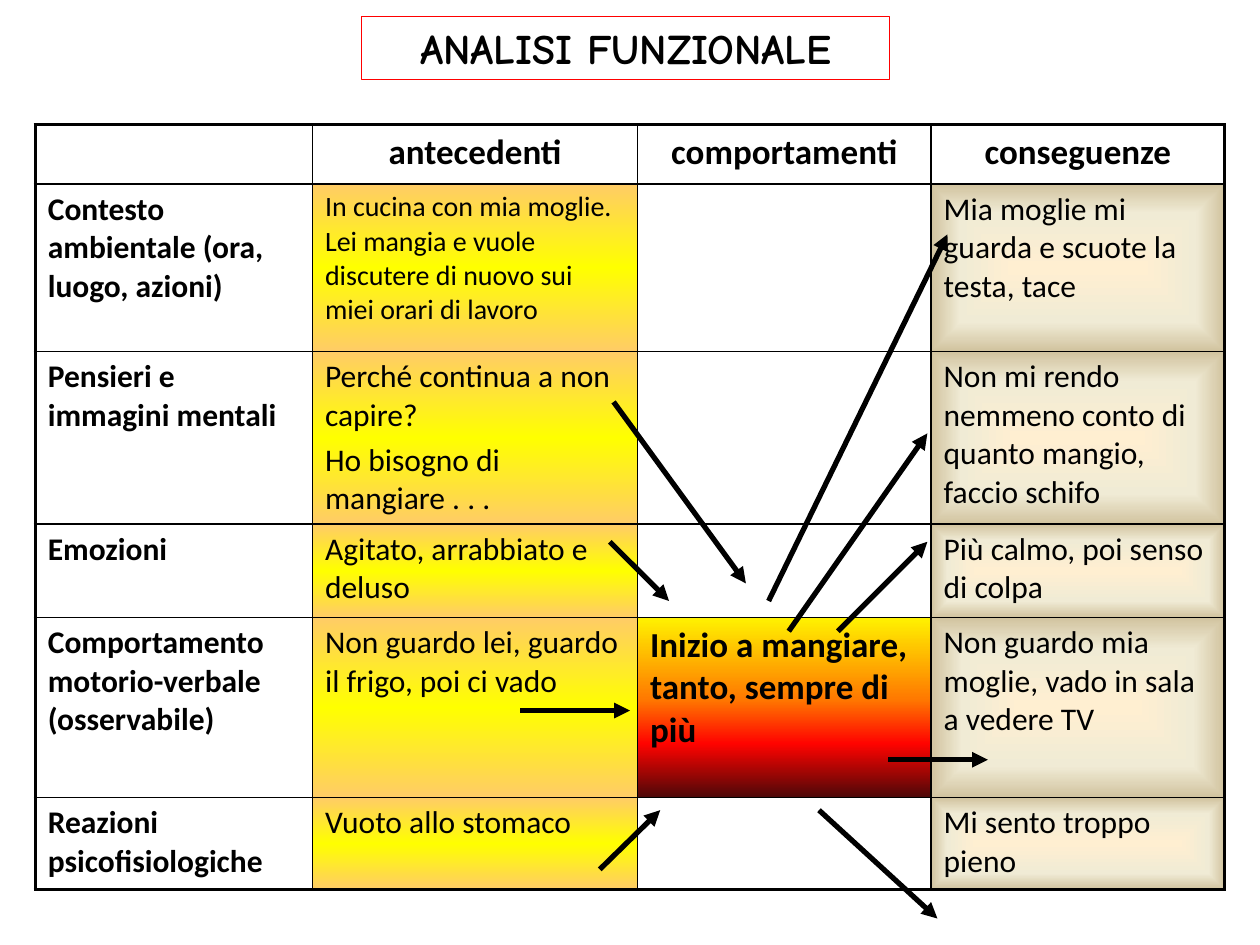
from lxml import etree
from pptx import Presentation
from pptx.dml.color import RGBColor
from pptx.enum.shapes import MSO_CONNECTOR
from pptx.enum.text import MSO_AUTO_SIZE, PP_ALIGN
from pptx.oxml.ns import qn
from pptx.util import Inches, Pt

STRAIGHT = MSO_CONNECTOR.STRAIGHT
CENTER, LEFT = PP_ALIGN.CENTER, PP_ALIGN.LEFT
GROW = MSO_AUTO_SIZE.SHAPE_TO_FIT_TEXT

COLORS = {"ink": "000000", "paper": "FFFFFF", "frame": "FF0000"}
YELLOW = [(0, "FFCC66"), (50, "FFFF00"), (100, "FFCC66")]
FIRE = [(0, "FFF200"), (45, "FF7A00"), (70, "FF0300"), (100, "4D0808")]
SAND = [(0, "FFEFD1"), (65, "F0EBD5"), (100, "D1C39F")]

COLS = [2.2, 2.58, 2.33, 2.33]
ROWS = [0.47, 1.33, 1.36, 0.74, 1.43, 0.73]
GRID = [
    ["", "antecedenti", "comportamenti", "conseguenze"],
    ["Contesto ambientale (ora, luogo, azioni)",
     "In cucina con mia moglie. Lei mangia e vuole discutere di nuovo sui miei orari di lavoro",
     "", "Mia moglie mi guarda e scuote la testa, tace"],
    ["Pensieri e immagini mentali",
     "Perché continua a non capire?\nHo bisogno di mangiare . . .",
     "", "Non mi rendo nemmeno conto di quanto mangio, faccio schifo"],
    ["Emozioni", "Agitato, arrabbiato e deluso", "", "Più calmo, poi senso di colpa"],
    ["Comportamento motorio-verbale (osservabile)",
     "Non guardo lei, guardo il frigo, poi ci vado",
     "Inizio a mangiare, tanto, sempre di più",
     "Non guardo mia moglie, vado in sala a vedere TV"],
    ["Reazioni psicofisiologiche", "Vuoto allo stomaco", "", "Mi sento troppo pieno"],
]
ARROWS = [
    (4.87, 3.19, 5.92, 4.63), (4.84, 4.3, 5.31, 4.77), (7.05, 6.03, 7.84, 6.03),
    (6.5, 6.43, 7.44, 7.29), (6.65, 5.01, 7.36, 4.3), (6.26, 5.01, 7.36, 3.44),
    (6.1, 4.77, 7.52, 1.86), (4.13, 5.64, 5, 5.64), (4.76, 6.9, 5.24, 6.43),
]


def rgb(name):
    return RGBColor.from_string(COLORS[name])


def node(parent, tag, **attrs):
    return etree.SubElement(parent, qn(tag), {k: str(v) for k, v in attrs.items()})


class Board:
    """Holds the text style and the current slide."""
    font = "Calibri"

    def __init__(self, slide):
        self.slide = slide

    def text(self, para, words, size, bold, align=LEFT, font=None):
        para.alignment = align
        run = para.add_run()
        run.text = words
        run.font.name = font or self.font
        run.font.size = Pt(size)
        run.font.bold = bold
        run.font.color.rgb = rgb("ink")

    def title(self, words, x, y, w, h):
        box = self.slide.shapes.add_textbox(Inches(x), Inches(y), Inches(w), Inches(h))
        box.line.color.rgb = rgb("frame")
        box.line.width = Pt(0.75)
        box.text_frame.word_wrap = False
        box.text_frame.auto_size = GROW
        self.text(box.text_frame.paragraphs[0], words, 24, True, CENTER, "Comic Neue")

    def arrow(self, *ends):
        line = self.slide.shapes.add_connector(STRAIGHT, *map(Inches, ends))
        line.line.color.rgb = rgb("ink")
        line.line.width = Pt(3)
        props = line._element.spPr
        node(props.find(qn("a:ln")), "a:tailEnd", type="triangle")
        node(props, "a:effectLst")

    def border(self, cell, edges):
        """Thick lines on the table's outer edges, thin ones inside."""
        for side in "LRTB":
            width = Pt(2.25 if side in edges else 1)
            line = node(cell._tc.get_or_add_tcPr(), "a:ln" + side, w=width)
            node(node(line, "a:solidFill"), "a:srgbClr", val=COLORS["ink"])

    def blend(self, cell, stops, radial=False):
        grad = node(cell._tc.get_or_add_tcPr(), "a:gradFill", rotWithShape=1)
        steps = node(grad, "a:gsLst")
        for pos, color in stops:
            node(node(steps, "a:gs", pos=pos * 1000), "a:srgbClr", val=color)
        if radial:
            shade = node(grad, "a:path", path="shape")
            node(shade, "a:fillToRect", l=50000, t=50000, r=50000, b=50000)
        else:
            node(grad, "a:lin", ang=90 * 60000, scaled=1)

    def fill(self, cell, row, col):
        if row and col == 1:
            self.blend(cell, YELLOW)
        elif row and col == 3:
            self.blend(cell, SAND, radial=True)
        elif (row, col) == (4, 2):
            self.blend(cell, FIRE)
        else:
            cell.fill.solid()
            cell.fill.fore_color.rgb = rgb("paper")

    def table(self, x, y):
        table = self.slide.shapes.add_table(
            len(ROWS), len(COLS), Inches(x), Inches(y),
            Inches(sum(COLS)), Inches(sum(ROWS))).table
        table.first_row = table.horz_banding = False
        for col, width in enumerate(COLS):
            table.columns[col].width = Inches(width)
        for row, height in enumerate(ROWS):
            table.rows[row].height = Inches(height)
            for col, words in enumerate(GRID[row]):
                self.cell(table.cell(row, col), row, col, words)

    def cell(self, cell, row, col, words):
        edges = {"T": row == 0, "B": row == len(ROWS) - 1,
                 "L": col == 0, "R": col == len(COLS) - 1}
        self.border(cell, [side for side, outer in edges.items() if outer])
        self.fill(cell, row, col)
        if not words:
            return
        key = row == 0 or col == 2
        size = 20 if key else 16 if (row, col) == (1, 1) else 18
        frame = cell.text_frame
        for i, part in enumerate(words.split("\n")):
            para = frame.add_paragraph() if i else frame.paragraphs[0]
            para.space_before = Pt(size * 0.2)
            self.text(para, part, size, key or col == 0, LEFT if row else CENTER)


def main():
    deck = Presentation()
    deck.slide_width, deck.slide_height = Inches(10), Inches(7.5)
    board = Board(deck.slides.add_slide(deck.slide_layouts[6]))
    board.table(0.28, 0.99)
    for ends in ARROWS:
        board.arrow(*ends)
    board.title("ANALISI FUNZIONALE", 2.87, 0.13, 4.19, 0.5)
    deck.save("out.pptx")


if __name__ == "__main__":
    main()
